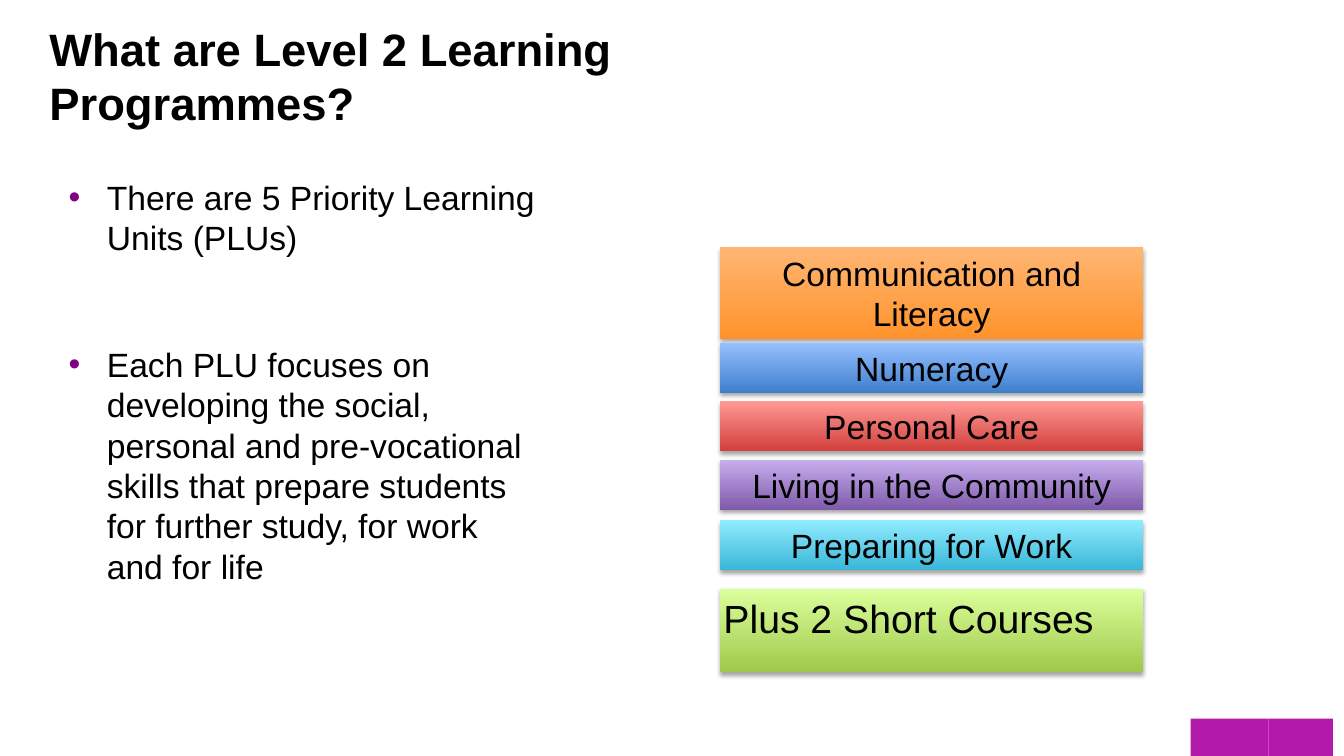
from lxml.etree import SubElement
from pptx import Presentation
from pptx.dml.color import RGBColor
from pptx.enum.shapes import MSO_SHAPE as SHAPE
from pptx.enum.text import MSO_ANCHOR as ANCHOR, MSO_AUTO_SIZE as AUTO, PP_ALIGN as ALIGN
from pptx.oxml.ns import qn
from pptx.util import Pt

PX = 9144  # EMU per px, 100 px to the inch


def rgb(code):
    return RGBColor.from_string(code)


class Deck:
    """Holds the style and the current slide."""
    font, ink, bullet = "Arial", "000000", "800080"

    def __init__(self, width, height):
        self.prs = Presentation()
        self.prs.slide_width, self.prs.slide_height = width * PX, height * PX
        self.s = self.prs.slides.add_slide(self.prs.slide_layouts[0])

    def place(self, sp, box):
        for name, value in zip(("left", "top", "width", "height"), box):
            setattr(sp, name, value * PX)

    def frame(self, sp, anchor, pad):
        tf = sp.text_frame
        style = {"word_wrap": True, "auto_size": AUTO.NONE, "vertical_anchor": anchor,
                 "margin_left": 10 * PX, "margin_right": 10 * PX,
                 "margin_top": pad * PX, "margin_bottom": pad * PX}
        for name, value in style.items():
            setattr(tf, name, value)
        return tf

    def put_text(self, p, text, size, align=ALIGN.CENTER, bold=False):
        p.alignment = align
        r = p.add_run()
        r.text = text
        for name, value in {"name": self.font, "size": Pt(size), "bold": bold}.items():
            setattr(r.font, name, value)
        r.font.color.rgb = rgb(self.ink)

    def title(self, text, box, size):
        sp = self.s.shapes.title
        self.place(sp, box)
        tf = self.frame(sp, ANCHOR.MIDDLE, 10)
        self.put_text(tf.paragraphs[0], text, size, ALIGN.LEFT, True)

    def bullets(self, items, box, size, gap):
        sp = self.s.placeholders[1]
        self.place(sp, box)
        tf = self.frame(sp, ANCHOR.TOP, 10)
        for i, text in enumerate(items):
            p = tf.add_paragraph() if i else tf.paragraphs[0]
            pPr = p._p.get_or_add_pPr()
            pPr.set("marL", str(38 * PX))
            pPr.set("indent", str(-38 * PX))
            SubElement(SubElement(pPr, qn("a:buClr")), qn("a:srgbClr"), val=self.bullet)
            SubElement(pPr, qn("a:buFont"), typeface=self.font)
            SubElement(pPr, qn("a:buChar"), char="•")
            p.space_before = Pt(gap if i else 0)
            self.put_text(p, text, size, ALIGN.LEFT)

    def rect(self, box, color):
        sp = self.s.shapes.add_shape(SHAPE.RECTANGLE, *(v * PX for v in box))
        sp.shadow.inherit = False
        sp.line.fill.background()
        sp.fill.solid()
        sp.fill.fore_color.rgb = rgb(color)
        return sp

    def bar(self, box, dark, light, text=None, size=24):
        sp = self.rect(box, dark)
        sp.fill.gradient()
        sp.fill.gradient_angle = 90
        for stop, color in zip(sp.fill.gradient_stops, (dark, light)):
            stop.color.rgb = rgb(color)
        # Soft shadow straight below
        effects = sp._element.spPr.find(qn("a:effectLst"))
        shadow = SubElement(effects, qn("a:outerShdw"), blurRad="40000", dist="23000",
                            dir="5400000", rotWithShape="0")
        color = SubElement(shadow, qn("a:srgbClr"), val="000000")
        SubElement(color, qn("a:alpha"), val="35000")
        if text:
            self.put_text(self.frame(sp, ANCHOR.MIDDLE, 5).paragraphs[0], text, size)

    def label(self, text, box, size):
        sp = self.s.shapes.add_textbox(*(v * PX for v in box))
        self.put_text(self.frame(sp, ANCHOR.TOP, 5).paragraphs[0], text, size)


def main():
    deck = Deck(1333, 750)

    # Corner blocks
    for left, width in ((1258, 64), (1181, 77)):
        deck.rect((left, 713, width, 37), "B31AAC")

    # Title and list
    deck.title("What are Level 2 Learning Programmes?", (39, 23, 854, 104), 32.4)
    deck.bullets(("There are 5 Priority Learning Units (PLUs)",
                  "Each PLU focuses on developing the social, personal and pre-vocational "
                  "skills that prepare students for further study, for work and for life"),
                 (58, 165, 485, 382), 24, 62)

    # Priority Learning Units
    units = (("Communication and Literacy", 245, 91, "FF932B", "FFB673"),
             ("Numeracy", 340, 50, "3E7FCD", "96C0FF"),
             ("Personal Care", 398, 50, "D13F3B", "FF9995"),
             ("Living in the Community", 456, 50, "7F5AAB", "C7AEED"),
             ("Preparing for Work", 516, 50, "38B6D8", "91ECFF"))
    for text, top, height, dark, light in units:
        deck.bar((714, top, 420, height), dark, light, text)

    # Short courses
    deck.bar((714, 584, 420, 83), "A0C94A", "DBFF9C")
    deck.label("Plus 2 Short Courses", (522, 585, 758, 57), 28)

    deck.prs.save("out.pptx")


if __name__ == "__main__":
    main()
